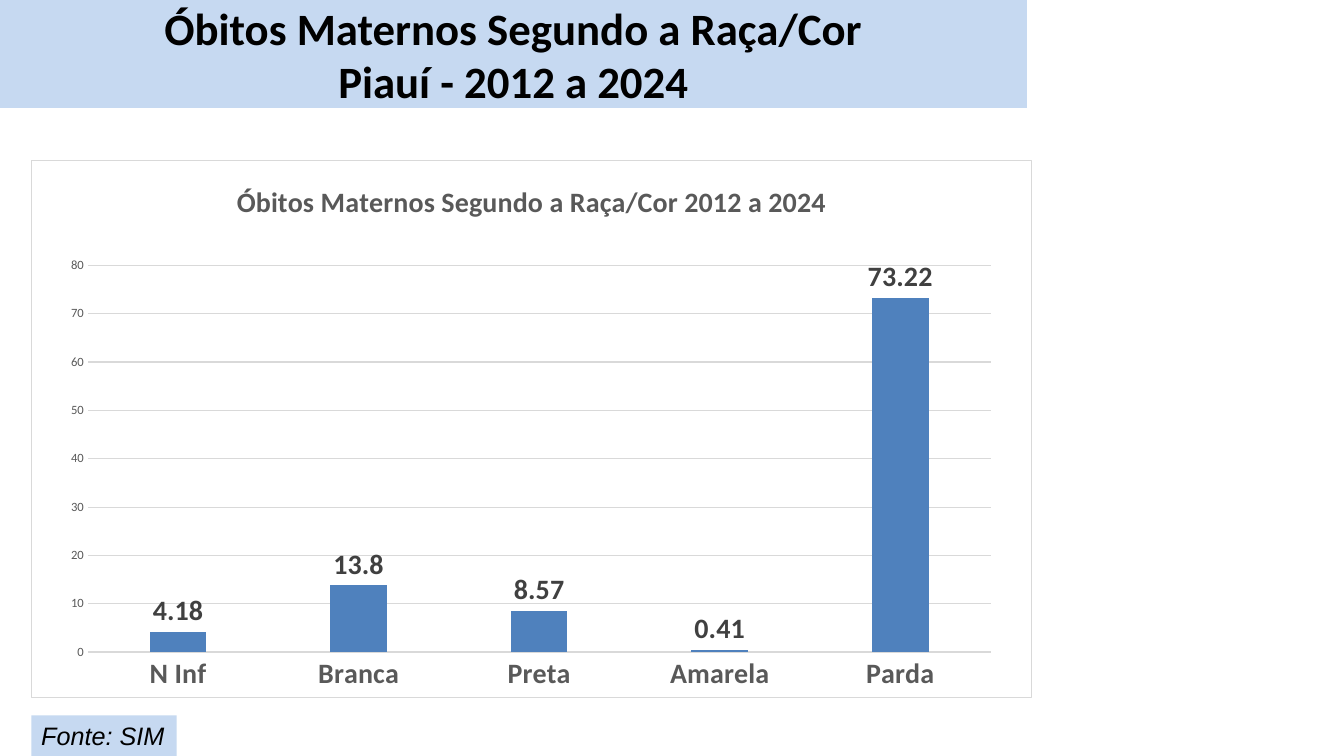
"""Builds a slide with a column chart of maternal deaths by race/colour in Piauí."""
from lxml import etree
from pptx import Presentation
from pptx.chart.data import CategoryChartData
from pptx.dml.color import RGBColor
from pptx.enum.chart import XL_CHART_TYPE, XL_LABEL_POSITION, XL_TICK_MARK
from pptx.enum.text import MSO_ANCHOR, MSO_AUTO_SIZE, PP_ALIGN
from pptx.oxml import parse_xml
from pptx.oxml.ns import nsdecls, qn
from pptx.util import Cm, Pt

COLUMNS = XL_CHART_TYPE.COLUMN_CLUSTERED
OUTSIDE_END = XL_LABEL_POSITION.OUTSIDE_END
NO_TICK = XL_TICK_MARK.NONE
MIDDLE = MSO_ANCHOR.MIDDLE
NO_FIT, GROW = MSO_AUTO_SIZE.NONE, MSO_AUTO_SIZE.SHAPE_TO_FIT_TEXT
CENTER, JUSTIFY = PP_ALIGN.CENTER, PP_ALIGN.JUSTIFY

TITLE_LINES = ["Óbitos Maternos Segundo a Raça/Cor", "Piauí - 2012 a 2024"]
CHART_TITLE = "Óbitos Maternos Segundo a Raça/Cor 2012 a 2024"
DEATHS = {"N Inf": 4.18, "Branca": 13.8, "Preta": 8.57, "Amarela": 0.41, "Parda": 73.22}
SOURCE = "Fonte: SIM"

COLORS = {"band": "C6D9F1", "text": "000000", "bar": "4F81BD", "grid": "D9D9D9",
          "axis": "595959", "label": "404040", "paper": "FFFFFF"}
TITLE_BOX = (0, 0, 25.88, 2.72)
CHART_BOX = (0.79, 4.04, 25.22, 13.54)
SOURCE_BOX = (0.79, 18.03, 3.66, 1.02)
PLOT = {"x": 0.056, "y": 0.195, "w": 0.903, "h": 0.721}


def rgb(name):
    return RGBColor.from_string(COLORS[name])


def style(font, size, color, bold=False, italic=False, name="Calibri"):
    font.size, font.bold, font.italic, font.name = Pt(size), bold, italic, name
    font.color.rgb = rgb(color)


def fill(shape, color):
    shape.fill.solid()
    shape.fill.fore_color.rgb = rgb(color)


def rule(line):
    line.color.rgb = rgb("grid")
    line.width = Pt(0.75)


def add_title(s):
    title = s.shapes.title
    title.left, title.top, title.width, title.height = map(Cm, TITLE_BOX)
    fill(title, "band")
    tf = title.text_frame
    tf.auto_size, tf.vertical_anchor = NO_FIT, MIDDLE
    p = tf.paragraphs[0]
    p.alignment = CENTER
    for i, line in enumerate(TITLE_LINES):
        if i:
            p.add_line_break()
        r = p.add_run()
        r.text = line
        style(r.font, 32, "text", bold=True)


def frame_chart(chart):
    space = chart.element
    border = parse_xml(
        f'<c:spPr {nsdecls("c", "a")}>'
        f'<a:solidFill><a:srgbClr val="{COLORS["paper"]}"/></a:solidFill>'
        f'<a:ln w="{Pt(0.75)}"><a:solidFill><a:srgbClr val="{COLORS["grid"]}"/>'
        '</a:solidFill></a:ln></c:spPr>')
    space.find(qn("c:txPr")).addprevious(border)
    area = space.find(".//" + qn("c:plotArea"))
    for old in area.findall(qn("c:layout")):
        area.remove(old)
    layout = etree.Element(qn("c:layout"))
    manual = etree.SubElement(layout, qn("c:manualLayout"))
    settings = {"layoutTarget": "inner", "xMode": "edge", "yMode": "edge", **PLOT}
    for tag, val in settings.items():
        etree.SubElement(manual, qn("c:" + tag)).set("val", str(val))
    area.insert(0, layout)


def add_deaths_chart(s):
    data = CategoryChartData()
    data.categories = list(DEATHS)
    data.add_series("Óbitos (%)", list(DEATHS.values()))
    chart = s.shapes.add_chart(COLUMNS, *map(Cm, CHART_BOX), data).chart
    style(chart.font, 10, "text")
    chart.has_legend = False
    chart.has_title = True
    r = chart.chart_title.text_frame.paragraphs[0].add_run()
    r.text = CHART_TITLE
    style(r.font, 20, "axis", bold=True)

    plot = chart.plots[0]
    plot.gap_width, plot.overlap, plot.vary_by_categories = 219, -27, False
    bars = plot.series[0]
    fill(bars.format, "bar")
    labels = bars.data_labels
    labels.show_value, labels.position = True, OUTSIDE_END
    style(labels.font, 20, "label", bold=True)

    cats, vals = chart.category_axis, chart.value_axis
    for axis in (cats, vals):
        axis.major_tick_mark = axis.minor_tick_mark = NO_TICK
    style(cats.tick_labels.font, 20, "axis", bold=True)
    style(vals.tick_labels.font, 9, "axis")
    rule(cats.format.line)
    vals.format.line.fill.background()
    vals.has_major_gridlines = True
    rule(vals.major_gridlines.format.line)
    frame_chart(chart)


def add_source(s):
    sp = s.shapes.add_textbox(*map(Cm, SOURCE_BOX))
    fill(sp, "band")
    tf = sp.text_frame
    tf.word_wrap, tf.auto_size = False, GROW
    p = tf.paragraphs[0]
    p.alignment = JUSTIFY
    r = p.add_run()
    r.text = SOURCE
    style(r.font, 18, "text", italic=True, name="Arial")


def main():
    prs = Presentation()
    prs.slide_width, prs.slide_height = Cm(33.87), Cm(19.05)
    s = prs.slides.add_slide(prs.slide_layouts[5])
    add_title(s)
    add_source(s)
    add_deaths_chart(s)
    prs.save("out.pptx")


if __name__ == "__main__":
    main()
